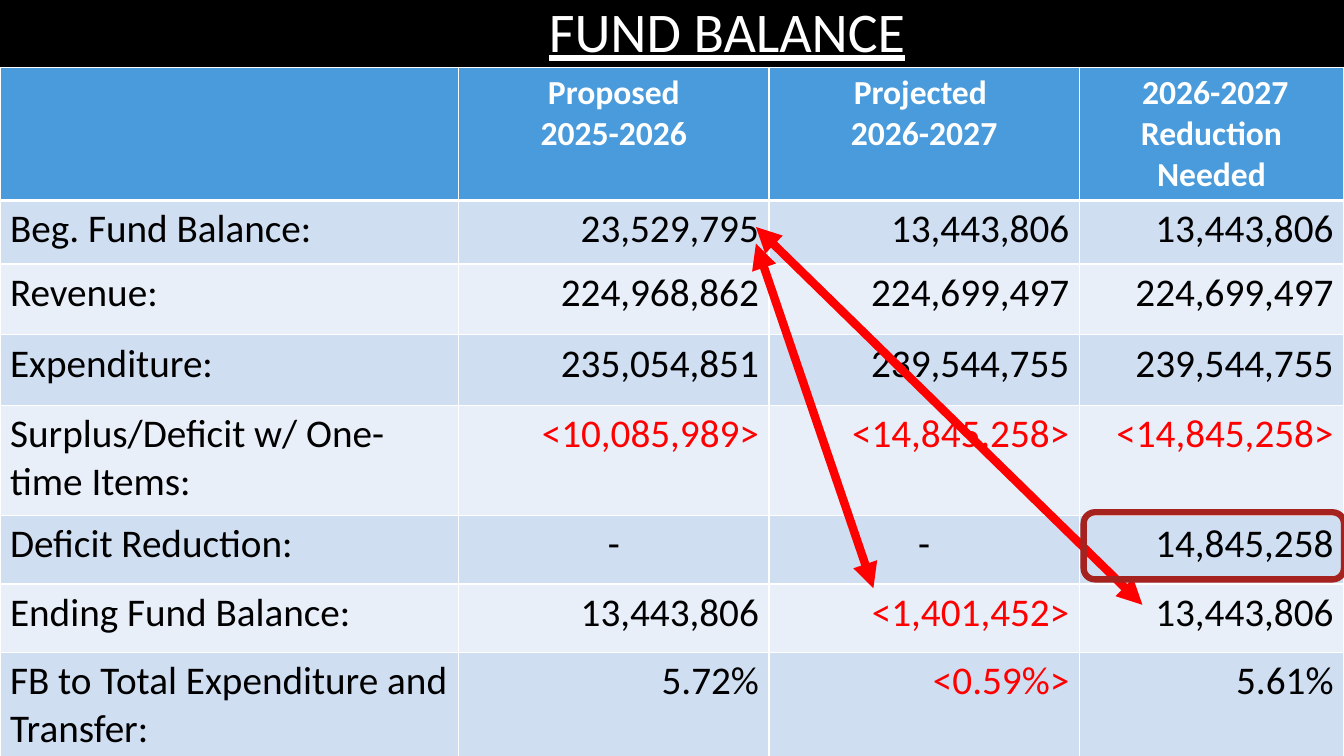
from pptx import Presentation
from pptx.dml.color import RGBColor as RGB
from pptx.enum.shapes import MSO_CONNECTOR as Conn, MSO_SHAPE as Shape
from pptx.enum.text import MSO_ANCHOR as Anchor, PP_ALIGN as Align
from pptx.oxml import parse_xml
from pptx.oxml.ns import nsdecls
from pptx.util import Cm, Pt

FONT = "Calibri"
WHITE, BLACK, RED = "FFFFFF", "000000", "FF0000"
HEAD, BANDS = "4A9BDC", ("D0DEF2", "E9EFF9")

COLS = (11.56, 7.82, 7.82, 6.66)
ROWS = (3.18, 1.6, 1.78, 1.78, 2.77, 1.73, 1.73, 2.77)
DATA = (
    ("", "Proposed\n2025-2026", "Projected \n2026-2027",
     " 2026-2027\nReduction Needed"),
    ("Beg. Fund Balance:", "23,529,795", "13,443,806", "13,443,806"),
    ("Revenue:", "224,968,862", "224,699,497", "224,699,497"),
    ("Expenditure:", "235,054,851", "239,544,755", "239,544,755"),
    ("Surplus/Deficit w/ One-time Items:",
     "<10,085,989>", "<14,845,258>", "<14,845,258>"),
    ("Deficit Reduction:", "-", "-", "14,845,258"),
    ("Ending Fund Balance:", "13,443,806", "<1,401,452>", "13,443,806"),
    ("FB to Total Expenditure and Transfer:", "5.72%", "<0.59%>", "5.61%"),
)


def color(code):
    return RGB.from_string(code)


def style(para, size, code, align, bold=False):
    para.alignment = align
    font = para.font
    font.name, font.size, font.bold = FONT, Pt(size), bold
    font.color.rgb = color(code)


def edge(cell, side, width):
    cell._tc.get_or_add_tcPr().append(parse_xml(
        f'<a:ln{side} {nsdecls("a")} w="{Pt(width)}"><a:solidFill>'
        f'<a:srgbClr val="{WHITE}"/></a:solidFill></a:ln{side}>'))


def fill_cell(cell, text, row, col):
    # Heavy rule between the header and the body
    for side in "LRTB":
        heavy = (row, side) in ((0, "B"), (1, "T"))
        edge(cell, side, 3 if heavy else 1)
    cell.fill.solid()
    cell.fill.fore_color.rgb = color(BANDS[(row - 1) % 2] if row else HEAD)
    cell.text = text
    if row == 0 or text == "-":
        align = Align.CENTER
    else:
        align = Align.RIGHT if col else Align.LEFT
    # Negative amounts stand in angle brackets
    body = RED if text.startswith("<") else BLACK
    for para in cell.text_frame.paragraphs:
        if row == 0:
            style(para, 24, WHITE, align, True)
        else:
            style(para, 28, body, align)


def add_grid(slide, top):
    frame = slide.shapes.add_table(len(ROWS), len(COLS), Cm(0), Cm(top),
                                   Cm(sum(COLS)), Cm(sum(ROWS)))
    table = frame.table
    for col, width in zip(table.columns, COLS):
        col.width = Cm(width)
    for row, height in zip(table.rows, ROWS):
        row.height = Cm(height)
    for i, line in enumerate(DATA):
        for j, text in enumerate(line):
            fill_cell(table.cell(i, j), text, i, j)


def add_title(slide, text, *box):
    frame = slide.shapes.add_textbox(*map(Cm, box)).text_frame
    frame.word_wrap = True
    frame.vertical_anchor = Anchor.MIDDLE
    frame.text = text
    para = frame.paragraphs[0]
    style(para, 40, WHITE, Align.CENTER)
    para.font.underline = True
    para.line_spacing = 0.9


def add_arrow(slide, *ends):
    arrow = slide.shapes.add_connector(Conn.STRAIGHT, *map(Cm, ends))
    arrow.line.width = Pt(6)
    arrow.line.color.rgb = color(RED)
    line = arrow.line._get_or_add_ln()
    for tag in ("headEnd", "tailEnd"):
        line.append(parse_xml(f'<a:{tag} {nsdecls("a")} type="triangle"/>'))
    arrow._element.spPr.append(parse_xml(f'<a:effectLst {nsdecls("a")}/>'))


def add_ring(slide, *box):
    ring = slide.shapes.add_shape(Shape.ROUNDED_RECTANGLE, *map(Cm, box))
    ring.shadow.inherit = False
    ring.fill.background()
    ring.line.width = Pt(4.5)
    ring.line.color.rgb = color("A5221E")


def main():
    deck = Presentation()
    deck.slide_width, deck.slide_height = Cm(33.87), Cm(19.05)
    slide = deck.slides.add_slide(deck.slide_layouts[6])
    back = slide.background.fill
    back.solid()
    back.fore_color.rgb = color(BLACK)

    add_grid(slide, 1.7)
    add_title(slide, "FUND BALANCE", 3.18, 0.13, 30.28, 1.47)
    # Links from the opening balance to the two ending balances
    add_arrow(slide, 19.05, 6.14, 22.01, 14.82)
    add_arrow(slide, 19.05, 5.72, 28.79, 15.24)
    # Ring round the reduction needed
    add_ring(slide, 27.31, 12.91, 6.56, 1.69)

    deck.save("out.pptx")


if __name__ == "__main__":
    main()
